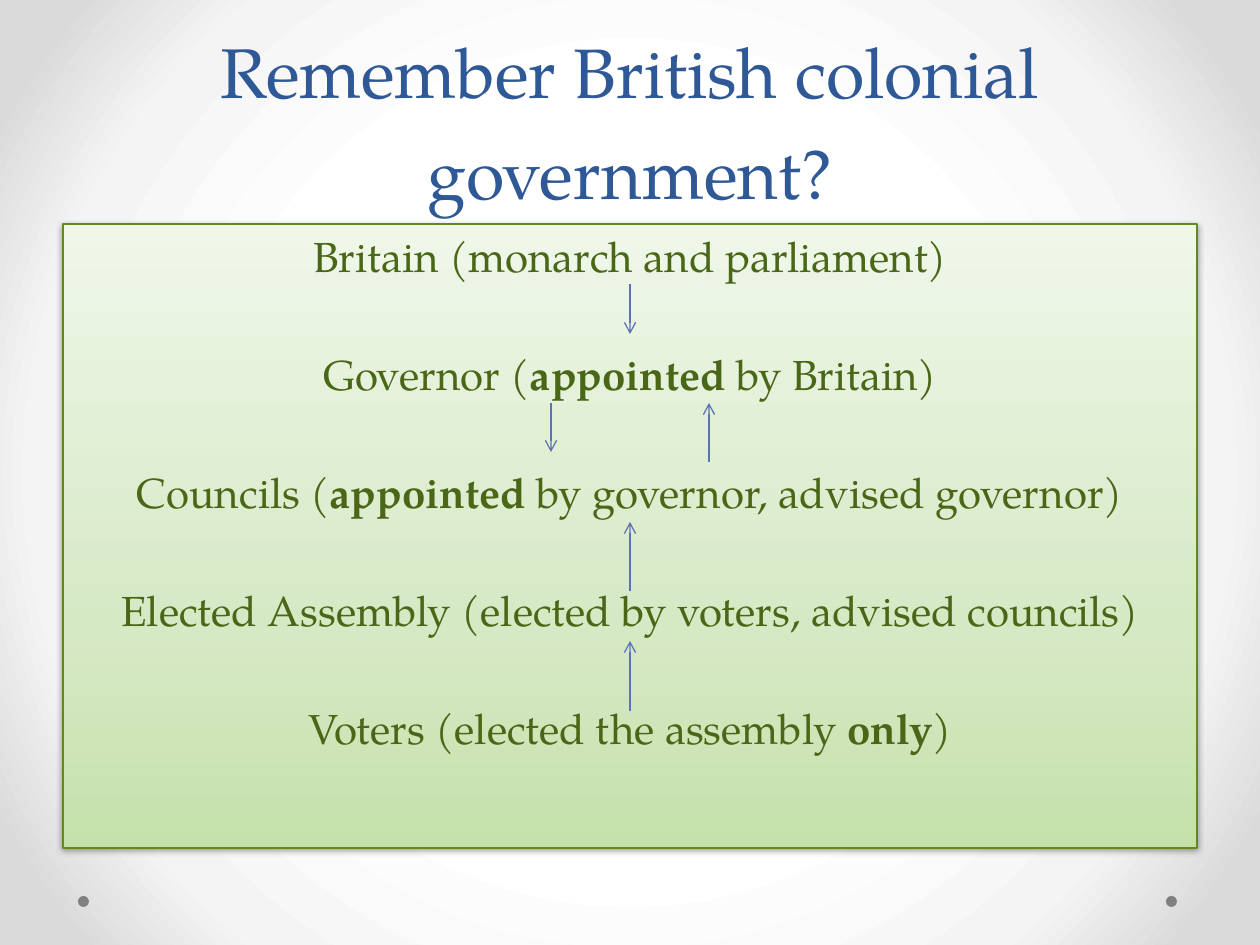
from lxml import etree
from pptx import Presentation
from pptx.dml.color import RGBColor
from pptx.enum.shapes import MSO_CONNECTOR, MSO_SHAPE
from pptx.enum.text import MSO_ANCHOR, MSO_AUTO_SIZE, PP_ALIGN
from pptx.oxml.ns import qn
from pptx.util import Emu, Pt

STRAIGHT = MSO_CONNECTOR.STRAIGHT
OVAL = MSO_SHAPE.OVAL
TOP, BOTTOM = MSO_ANCHOR.TOP, MSO_ANCHOR.BOTTOM
CENTER = PP_ALIGN.CENTER
NO_FIT = MSO_AUTO_SIZE.NONE

FONT = "TeX Gyre Pagella"
COLORS = {
    "title": "2F5897", "text": "4A6717", "border": "62891C",
    "arrow": "5C72B2", "dot": "808080", "shadow": "000000",
}
BACKGROUND = [(50, "FFFFFF"), (76, "F4F4F4"), (92, "DADADA")]
PANEL = [(0, "C5E1AB"), (35, "D6E9C5"), (100, "EFF7E9")]


def px(n):
    return Emu(round(n * 914400 / 126))


def rgb(name):
    return RGBColor.from_string(COLORS[name])


def add(parent, tag, **attrs):
    return etree.SubElement(parent, qn(tag), {k: str(v) for k, v in attrs.items()})


class Deck:
    def __init__(self):
        self.prs = Presentation()
        self.prs.slide_width, self.prs.slide_height = px(1260), px(945)
        self.s = self.prs.slides.add_slide(self.prs.slide_layouts[1])

    def gradient(self, owner, fill, stops, angle=None):
        """Linear gradient at an angle, or a circular one without it."""
        fill.gradient()
        grad = owner.element.find(".//" + qn("a:gradFill"))
        for child in list(grad):
            grad.remove(child)
        gs_list = add(grad, "a:gsLst")
        for pos, color in stops:
            gs = add(gs_list, "a:gs", pos=pos * 1000)
            add(gs, "a:srgbClr", val=color)
        if angle is None:
            path = add(grad, "a:path", path="circle")
            add(path, "a:fillToRect", l=50000, t=50000, r=50000, b=50000)
        else:
            add(grad, "a:lin", ang=angle * 60000, scaled=0)

    def background(self, stops):
        self.gradient(self.s, self.s.background.fill, stops)

    def placeholder(self, sp, box, lines, size, color, anchor, leading, gap=0):
        """Fill a placeholder; each line is a list of (text, bold) runs."""
        sp.left, sp.top, sp.width, sp.height = map(px, box)
        tf = sp.text_frame
        tf.word_wrap, tf.auto_size, tf.vertical_anchor = True, NO_FIT, anchor
        for i, line in enumerate(lines):
            p = tf.add_paragraph() if i else tf.paragraphs[0]
            p.alignment, p.line_spacing = CENTER, Pt(leading)
            p.space_before = Pt(gap if i else 0)
            pPr = p._p.get_or_add_pPr()
            pPr.set("marL", "0")
            pPr.set("indent", "0")
            add(pPr, "a:buNone")
            for text, bold in line:
                r = p.add_run()
                r.text = text
                r.font.name, r.font.size, r.font.bold = FONT, Pt(size), bold
                r.font.color.rgb = rgb(color)

    def panel(self, sp, stops):
        self.gradient(sp, sp.fill, stops, 270)
        sp.line.color.rgb, sp.line.width = rgb("border"), Pt(0.75)
        effects = add(sp.element.spPr, "a:effectLst")
        shadow = add(effects, "a:outerShdw", blurRad=Pt(3.1), dist=Pt(1.6),
                     dir=90 * 60000, rotWithShape=0)
        add(add(shadow, "a:srgbClr", val=COLORS["shadow"]), "a:alpha", val=38000)

    def dot(self, x, y, d):
        sp = self.s.shapes.add_shape(OVAL, px(x), px(y), px(d), px(d))
        sp.shadow.inherit = False
        sp.fill.solid()
        sp.fill.fore_color.rgb = rgb("dot")
        sp.line.fill.background()

    def arrow(self, x, y1, y2):
        c = self.s.shapes.add_connector(STRAIGHT, px(x), px(y1), px(x), px(y2))
        c.line.color.rgb, c.line.width = rgb("arrow"), Pt(0.75)
        add(c.line._get_or_add_ln(), "a:tailEnd", type="arrow")
        add(c.element.spPr, "a:effectLst")


def main():
    deck = Deck()
    deck.background(BACKGROUND)
    title, body = deck.s.placeholders

    # Footer dots
    for x in (1166, 78):
        deck.dot(x, 896, 11)

    # Title
    deck.placeholder(title, (63, 0, 1134, 220),
                     [[("Remember British colonial government?", False)]],
                     40, "title", BOTTOM, 58)

    # Levels of government
    levels = [
        [("Britain (monarch and parliament)", False)],
        [("Governor (", False), ("appointed", True), (" by Britain)", False)],
        [("Councils (", False), ("appointed", True),
         (" by governor, advised governor)", False)],
        [("Elected Assembly (elected by voters, advised councils)", False)],
        [("Voters (elected the assembly ", False), ("only", True), (")", False)],
    ]
    deck.placeholder(body, (63, 224, 1134, 624), levels, 24, "text", TOP, 29, 38.4)
    deck.panel(body, PANEL)

    # Arrows between levels
    for x, start, end in [(630, 284, 334), (551, 403, 452), (709, 462, 403),
                          (630, 591, 522), (630, 711, 641)]:
        deck.arrow(x, start, end)

    deck.prs.save("out.pptx")


if __name__ == "__main__":
    main()
